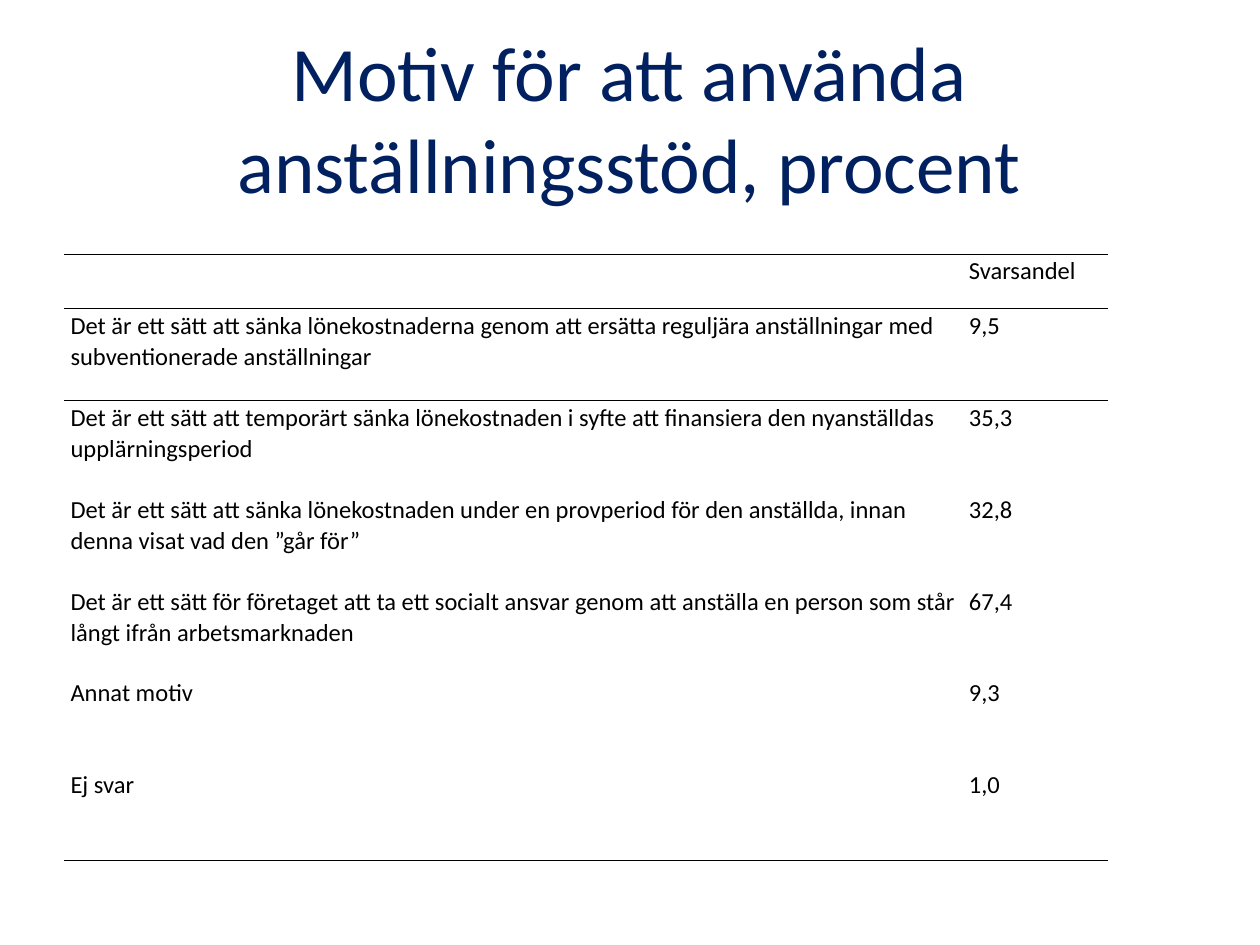
from lxml.etree import SubElement, Element
from pptx import Presentation
from pptx.dml.color import RGBColor as Rgb
from pptx.enum.text import MSO_ANCHOR as Anchor, PP_ALIGN as Align
from pptx.oxml.ns import qn
from pptx.util import Inches, Pt

HUES = {"title": "002060", "text": "000000", "rule": "000000"}
FACE = "Calibri"
PLAIN = "{2D5ABB26-0587-4C30-8999-92F81FD0307C}"  # table style without grid
PADS = {
    "margin_left": Inches(0.05),
    "margin_right": Inches(0.05),
    "margin_top": 0,
    "margin_bottom": 0,
}
COLS = (7.13, 1.15)
HEAD, STEP = 0.43, 0.73
ROWS = [
    ("", "Svarsandel"),
    ("Det är ett sätt att sänka lönekostnaderna genom att ersätta reguljära "
     "anställningar med subventionerade anställningar", "9,5"),
    ("Det är ett sätt att temporärt sänka lönekostnaden i syfte att finansiera "
     "den nyanställdas upplärningsperiod", "35,3"),
    ("Det är ett sätt att sänka lönekostnaden under en provperiod för den "
     "anställda, innan denna visat vad den ”går för”", "32,8"),
    ("Det är ett sätt för företaget att ta ett socialt ansvar genom att "
     "anställa en person som står långt ifrån arbetsmarknaden", "67,4"),
    ("Annat motiv", "9,3"),
    ("Ej svar", "1,0"),
]


def style(font, size, hue):
    look = {"name": FACE, "size": Pt(size)}
    for key, val in look.items():
        setattr(font, key, val)
    font.color.rgb = Rgb.from_string(HUES[hue])


def add_rule(cell, side):
    """Draw one horizontal border; side is lnT or lnB."""
    line = Element(qn(f"a:{side}"), w=str(Pt(1)))
    fill = SubElement(line, qn("a:solidFill"))
    SubElement(fill, qn("a:srgbClr"), val=HUES["rule"])
    cell._tc.get_or_add_tcPr().insert(0, line)


def fill_cell(cell, text):
    cell.fill.background()
    for key, val in PADS.items():
        setattr(cell, key, val)
    para = cell.text_frame.paragraphs[0]
    para.line_spacing = 1.07
    if text:
        run = para.add_run()
        run.text = text
        style(run.font, 14, "text")


def add_title(slide, left, top, width, height):
    title = slide.shapes.title
    box = {"left": left, "top": top, "width": width, "height": height}
    for key, val in box.items():
        setattr(title, key, Inches(val))
    frame = title.text_frame
    frame.text = "Motiv för att använda anställningsstöd, procent"
    frame.word_wrap = True
    frame.vertical_anchor = Anchor.MIDDLE
    para = frame.paragraphs[0]
    para.alignment = Align.CENTER
    style(para.runs[0].font, 44, "title")


def add_answers(slide, left, top, width, height):
    box = [Inches(val) for val in (left, top, width, height)]
    table = slide.shapes.add_table(len(ROWS), len(COLS), *box).table
    table.first_row = table.horz_banding = False
    table._tbl.tblPr.find(qn("a:tableStyleId")).text = PLAIN
    for col, wide in zip(table.columns, COLS):
        col.width = Inches(wide)

    last = len(ROWS) - 1
    for i, texts in enumerate(ROWS):
        table.rows[i].height = Inches(STEP if i else HEAD)
        for j, text in enumerate(texts):
            cell = table.cell(i, j)
            fill_cell(cell, text)
            # Rules frame the header and close the table
            if i in (0, last):
                add_rule(cell, "lnB")
            if i in (0, 1):
                add_rule(cell, "lnT")


def main():
    deck = Presentation()
    deck.slide_width, deck.slide_height = Inches(10), Inches(7.5)
    slide = deck.slides.add_slide(deck.slide_layouts[5])
    add_title(slide, 0.5, 0.3, 8.99, 1.25)
    add_answers(slide, 0.51, 2.02, sum(COLS), HEAD + STEP * (len(ROWS) - 1))
    deck.save("out.pptx")


if __name__ == "__main__":
    main()
